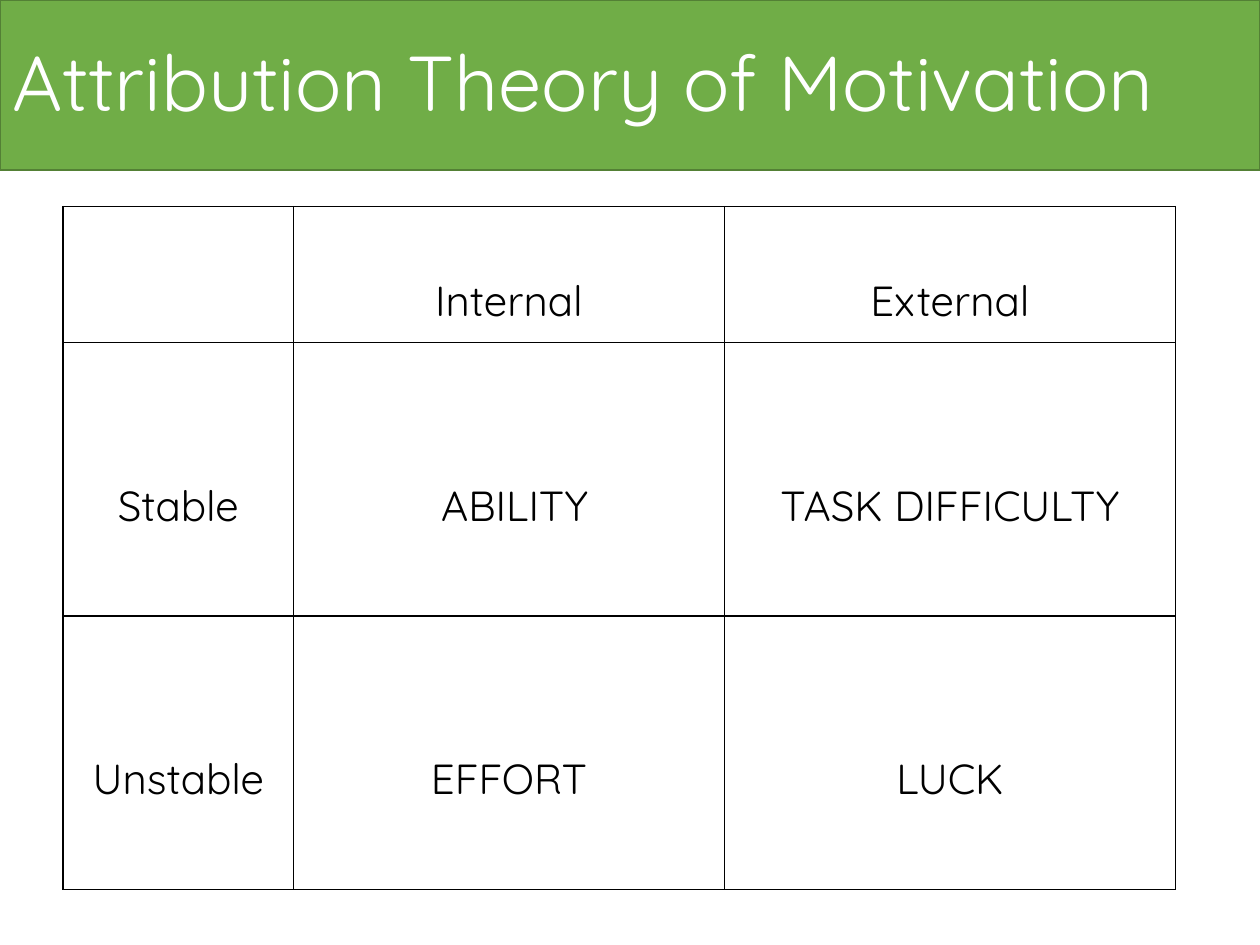
from lxml.etree import SubElement
from pptx import Presentation
from pptx.dml.color import RGBColor
from pptx.enum.shapes import MSO_SHAPE as Shape
from pptx.enum.text import MSO_ANCHOR as Anchor, PP_ALIGN as Align
from pptx.oxml.ns import qn
from pptx.util import Inches, Pt

COLORS = {"banner": "70AD47", "banner_line": "538035", "title": "FFFFFF", "ink": "000000"}
FONT = "Quicksand"


def style_text(paragraph, size, color, align, spacing):
    paragraph.alignment = align
    paragraph.line_spacing = spacing
    paragraph.font.name = FONT
    paragraph.font.size = Pt(size)
    paragraph.font.color.rgb = RGBColor.from_string(COLORS[color])


def add_borders(cell):
    properties = cell._tc.get_or_add_tcPr()
    for side in ("lnL", "lnR", "lnT", "lnB"):
        line = SubElement(properties, qn(f"a:{side}"), w=str(Pt(1)))
        fill = SubElement(line, qn("a:solidFill"))
        SubElement(fill, qn("a:srgbClr"), val=COLORS["ink"])


presentation = Presentation()
presentation.slide_width, presentation.slide_height = Inches(10), Inches(7.5)
slide = presentation.slides.add_slide(presentation.slide_layouts[6])

# Attribution grid: locus across, stability down
rows = [
    ["", "Internal", "External"],
    ["Stable", " ABILITY", "TASK DIFFICULTY"],
    ["Unstable", "EFFORT", "LUCK"],
]
column_widths = [1.83, 3.42, 3.58]
row_heights = [1.08, 2.17, 2.17]
table = slide.shapes.add_table(
    len(rows), len(column_widths), Inches(0.5), Inches(1.64),
    Inches(sum(column_widths)), Inches(sum(row_heights)),
).table
table.first_row = table.horz_banding = False
for column, width in zip(table.columns, column_widths):
    column.width = Inches(width)
for row, height, texts in zip(table.rows, row_heights, rows):
    row.height = Inches(height)
    for cell, text in zip(row.cells, texts):
        add_borders(cell)
        cell.fill.background()
        cell.vertical_anchor = Anchor.MIDDLE
        cell.margin_left = cell.margin_right = Inches(0.07)
        cell.margin_top = cell.margin_bottom = 0
        if text:
            cell.text = text
            style_text(cell.text_frame.paragraphs[0], 24, "ink", Align.CENTER, 2.0)

# Title banner across the full width
banner = slide.shapes.add_shape(Shape.RECTANGLE, 0, 0, presentation.slide_width, Inches(1.35))
banner.shadow.inherit = False
banner.fill.solid()
banner.fill.fore_color.rgb = RGBColor.from_string(COLORS["banner"])
banner.line.color.rgb = RGBColor.from_string(COLORS["banner_line"])
banner.line.width = Pt(1)
banner.text_frame.word_wrap = True
banner.text_frame.vertical_anchor = Anchor.MIDDLE
banner.text_frame.text = "Attribution Theory of Motivation"
style_text(banner.text_frame.paragraphs[0], 44.4, "title", Align.LEFT, 0.95)

presentation.save("out.pptx")
